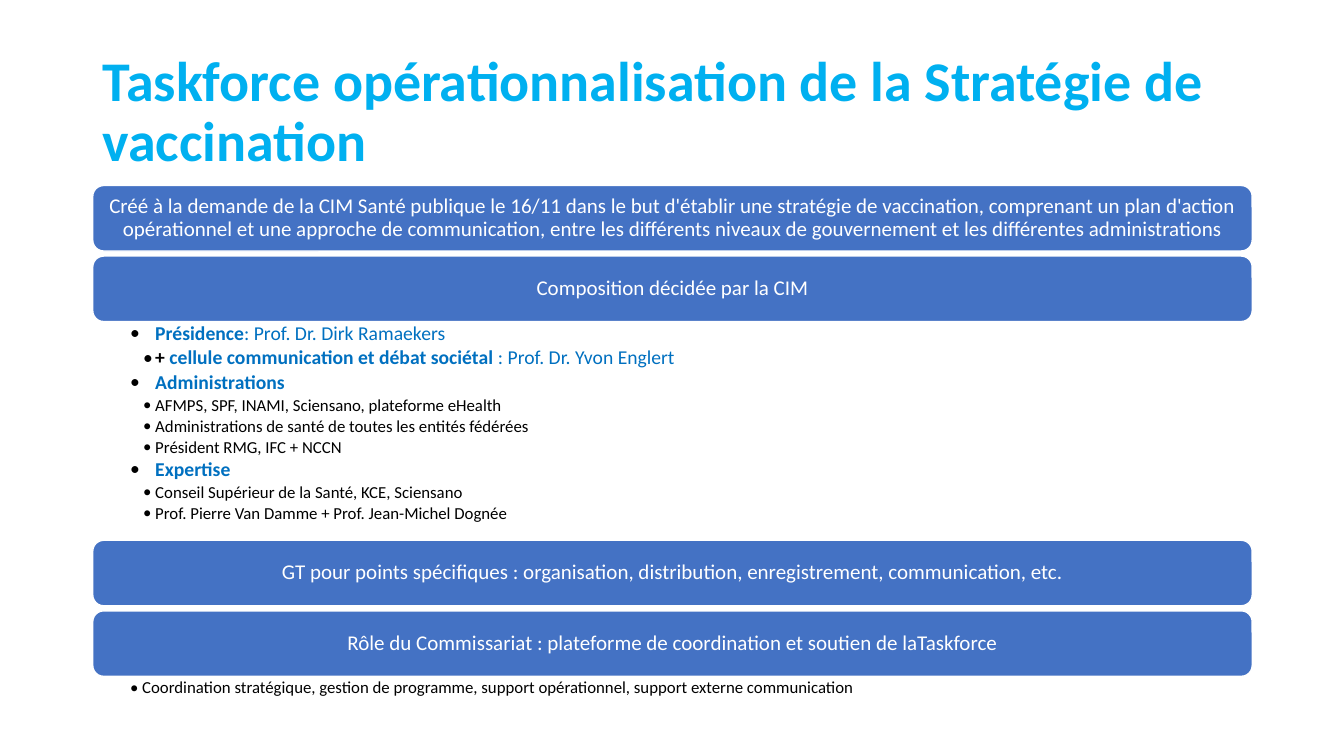
"""Build the slide on the vaccination strategy taskforce."""
from lxml.etree import SubElement as Sub
from pptx import Presentation
from pptx.dml.color import RGBColor as RGB
from pptx.enum.shapes import MSO_SHAPE as Shape
from pptx.enum.text import MSO_ANCHOR as Anchor, PP_ALIGN as Align
from pptx.oxml.ns import qn
from pptx.util import Inches, Pt

BLUE, SKY, DEEP = "4472C4", "00B0F0", "0070C0"
WHITE, BLACK = "FFFFFF", "000000"
LEFT, WIDE, TALL = 0.92, 11.5, 0.65


def paint(tint):
    return RGB.from_string(tint)


def write(par, text, size=12, tint=BLACK, bold=False):
    run = par.add_run()
    run.text = text
    font = run.font
    font.name, font.size, font.bold = "Calibri", Pt(size), bold
    font.color.rgb = paint(tint)


def inset(frame, left, top, right, low):
    frame.word_wrap = True
    frame.margin_left, frame.margin_top = Inches(left), Inches(top)
    frame.margin_right, frame.margin_bottom = Inches(right), Inches(low)


class Deck:
    def __init__(self):
        self.file = Presentation()
        self.file.slide_width = Inches(13.33)
        self.file.slide_height = Inches(7.5)
        self.slide = self.file.slides.add_slide(self.file.slide_layouts[6])

    def box(self, top, high):
        area = map(Inches, (LEFT, top, WIDE, high))
        return self.slide.shapes.add_textbox(*area).text_frame

    def title(self, text):
        frame = self.box(0.4, 1.45)
        inset(frame, 0.1, 0.05, 0.1, 0.05)
        frame.vertical_anchor = Anchor.MIDDLE
        par = frame.paragraphs[0]
        par.line_spacing = 0.9
        write(par, text, size=40, tint=SKY, bold=True)

    def bar(self, top, text):
        area = map(Inches, (LEFT, top, WIDE, TALL))
        shape = self.slide.shapes.add_shape(Shape.ROUNDED_RECTANGLE, *area)
        shape.shadow.inherit = False
        shape.fill.solid()
        shape.fill.fore_color.rgb = paint(BLUE)
        shape.line.color.rgb = paint(WHITE)
        shape.line.width = Pt(1)
        frame = shape.text_frame
        inset(frame, 0.09, 0.09, 0.09, 0.09)
        frame.vertical_anchor = Anchor.MIDDLE
        par = frame.paragraphs[0]
        par.alignment, par.line_spacing = Align.CENTER, 0.9
        write(par, text, size=15, tint=WHITE)

    def bullets(self, top, high, items):
        frame = self.box(top, high)
        inset(frame, 0.37, 0.02, 0.1, 0.02)
        for num, (edge, hang, size, runs) in enumerate(items):
            par = frame.add_paragraph() if num else frame.paragraphs[0]
            par.line_spacing, par.space_after = 0.9, Pt(size / 6)
            props = par._p.get_or_add_pPr()
            props.set("marL", str(Inches(edge)))
            props.set("indent", str(-Inches(hang)))
            Sub(Sub(props, qn("a:buClr")), qn("a:srgbClr"), val=BLACK)
            Sub(props, qn("a:buFont"), typeface="Calibri")
            Sub(props, qn("a:buChar"), char="•")
            for text, tint, bold in runs:
                write(par, text, size=size, tint=tint, bold=bold)


def head(text, *more):
    return 0.25, 0.25, 14, [(text, DEEP, True), *more]


def item(text, edge=0.25):
    return edge, 0.12, 12, [(text, BLACK, False)]


deck = Deck()
deck.title("Taskforce opérationnalisation de la Stratégie de vaccination")

bars = [
    (1.84, "Créé à la demande de la CIM Santé publique le 16/11 dans le but "
           "d'établir une stratégie de vaccination, comprenant un plan d'action "
           "opérationnel et une approche de communication, entre les différents "
           "niveaux de gouvernement et les différentes administrations"),
    (2.54, "Composition décidée par la CIM"),
    (5.36, "GT pour points spécifiques : organisation, distribution, "
           "enregistrement, communication, etc."),
    (6.06, "Rôle du Commissariat : plateforme de coordination et soutien de "
           "laTaskforce"),
]
for top, text in bars:
    deck.bar(top, text)

deck.bullets(3.19, 2.17, [
    head("Présidence", (": Prof. Dr. Dirk Ramaekers", DEEP, False)),
    (0.25, 0.12, 14, [
        ("+ ", BLACK, True),
        ("cellule communication et débat sociétal ", DEEP, True),
        (": Prof. Dr. Yvon Englert", DEEP, False),
    ]),
    head("Administrations"),
    item("AFMPS, SPF, INAMI, Sciensano, plateforme eHealth"),
    item("Administrations de santé de toutes les entités fédérées"),
    item("Président RMG, IFC + NCCN"),
    head("Expertise"),
    item("Conseil Supérieur de la Santé, KCE, Sciensano"),
    item("Prof. Pierre Van Damme + Prof. Jean-Michel Dognée"),
])
deck.bullets(6.72, 0.27, [
    item("Coordination stratégique, gestion de programme, support "
         "opérationnel, support externe communication", edge=0.12),
])
deck.file.save("out.pptx")
